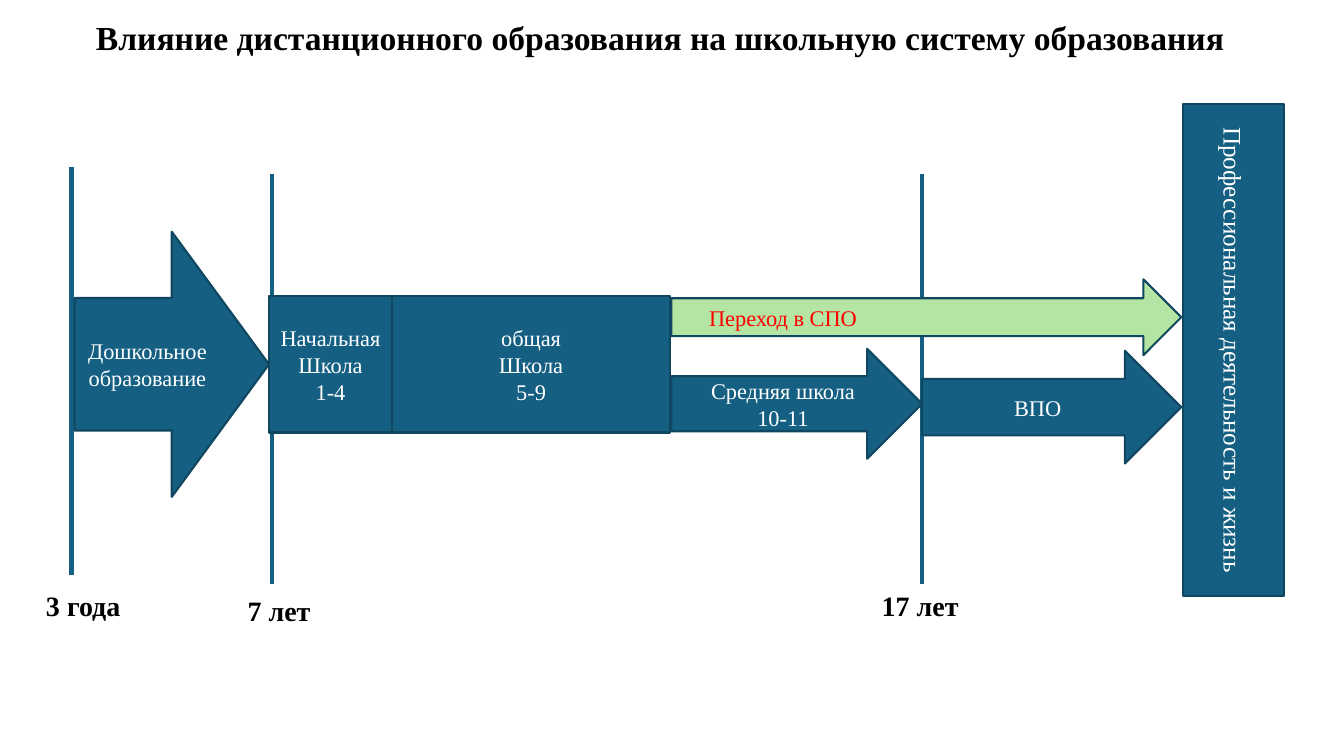
from lxml.etree import SubElement
from pptx import Presentation
from pptx.dml.color import RGBColor
from pptx.enum.shapes import MSO_CONNECTOR, MSO_SHAPE
from pptx.enum.text import MSO_ANCHOR, MSO_AUTO_SIZE, PP_ALIGN
from pptx.oxml.ns import qn
from pptx.util import Cm, Pt

BLUE, EDGE, GREEN = "156082", "104760", "B4E5A2"
WHITE, BLACK, RED = "FFFFFF", "000000", "FF0000"


def paint(code):
    """Turn a hex string into a colour."""
    return RGBColor.from_string(code)


def write(frame, text, size=16, color=WHITE, bold=False, align=PP_ALIGN.CENTER):
    """Fill a text frame, one paragraph for each line of text."""
    frame.word_wrap = True
    frame.text = text
    for para in frame.paragraphs:
        para.alignment = align
        font = para.font
        font.name, font.size, font.bold = "Times New Roman", Pt(size), bold
        font.color.rgb = paint(color)


def label(page, box, text, **form):
    """Add a bold black text box that grows with its text."""
    item = page.shapes.add_textbox(*map(Cm, box))
    write(item.text_frame, text, color=BLACK, bold=True, **form)
    item.text_frame.auto_size = MSO_AUTO_SIZE.SHAPE_TO_FIT_TEXT
    return item


def block(page, kind, box, text, fill=BLUE, **form):
    """Add an outlined shape with text in its middle."""
    item = page.shapes.add_shape(kind, *map(Cm, box))
    item.shadow.inherit = False
    item.fill.solid()
    item.fill.fore_color.rgb = paint(fill)
    item.line.color.rgb = paint(EDGE)
    item.line.width = Pt(1.5)
    item.text_frame.vertical_anchor = MSO_ANCHOR.MIDDLE
    write(item.text_frame, text, **form)
    return item


def mark(page, box, text, shift, drop):
    """Draw an age line down the left of the box, with its age below."""
    left, top, wide, high = box
    base = top + high
    name = label(page, (left + shift, base + drop, wide, 1.12), text,
                 size=20, align=PP_ALIGN.LEFT)
    rule = page.shapes.add_connector(
        MSO_CONNECTOR.STRAIGHT, Cm(left), Cm(top), Cm(left), Cm(base))
    rule.line.color.rgb = paint(BLUE)
    rule.line.width = Pt(3)
    SubElement(rule._element.spPr, qn("a:effectLst"))
    if shift == -wide / 2 and drop == 0:
        rule.end_connect(name, 0)


def ages(page, box):
    """Place the three age marks along the box."""
    left, top, wide, high = box
    mark(page, (left, top, 2.54, 10.28), "3 года", -0.89, 0.21)
    mark(page, (left + 5.06, top + 0.17, 2.54, high), "7 лет", -0.87, 0.12)
    mark(page, (left + wide, top + 0.17, 2.54, high), "17 лет", -1.27, 0)


def school(page, box):
    """Place preschool and the two school stages from left to right."""
    left, top, wide, high = box
    mid = top + high / 2
    first, low = 4.9, 3.1
    block(page, MSO_SHAPE.RIGHT_ARROW, (left, top, first, high),
          "Дошкольное\nобразование")
    block(page, MSO_SHAPE.RECTANGLE, (left + first, mid - 1.71, low, 3.43),
          "Начальная\nШкола\n1-4")
    block(page, MSO_SHAPE.RECTANGLE,
          (left + first + low, mid - 1.71, wide - first - low, 3.43),
          "общая\nШкола\n5-9")


def routes(page, box):
    """Place the two routes that lead from school to work."""
    left, top, wide, high = box
    step = 6.32
    base = top + high
    block(page, MSO_SHAPE.RIGHT_ARROW, (left, base - 2.89, step, 2.77),
          "Средняя школа\n10-11")
    block(page, MSO_SHAPE.RIGHT_ARROW,
          (left + step, base - 2.84, wide - step, 2.84), "ВПО")
    route = block(page, MSO_SHAPE.RIGHT_ARROW, (left, top, wide, 1.91),
                  "Переход в СПО", fill=GREEN, color=RED, align=PP_ALIGN.LEFT)
    route.text_frame.margin_left = Cm(0.95)


def work(page, box):
    """Place the upright bar for working life."""
    bar = block(page, MSO_SHAPE.RECTANGLE, box,
                "Профессиональная деятельность и жизнь", size=18)
    bar.text_frame._txBody.bodyPr.set("vert", "vert")


def main():
    """Build the slide and save it."""
    deck = Presentation()
    deck.slide_width, deck.slide_height = Cm(33.87), Cm(19.05)
    page = deck.slides.add_slide(deck.slide_layouts[6])
    label(page, (0, 0.3, 33.27, 1.27),
          "Влияние дистанционного образования на школьную систему образования",
          size=24)
    work(page, (29.82, 2.62, 2.54, 12.4))
    ages(page, (1.8, 4.22, 21.44, 10.32))
    school(page, (1.88, 5.84, 15.01, 6.68))
    routes(page, (16.92, 7.04, 12.85, 4.64))
    deck.save("out.pptx")


if __name__ == "__main__":
    main()
